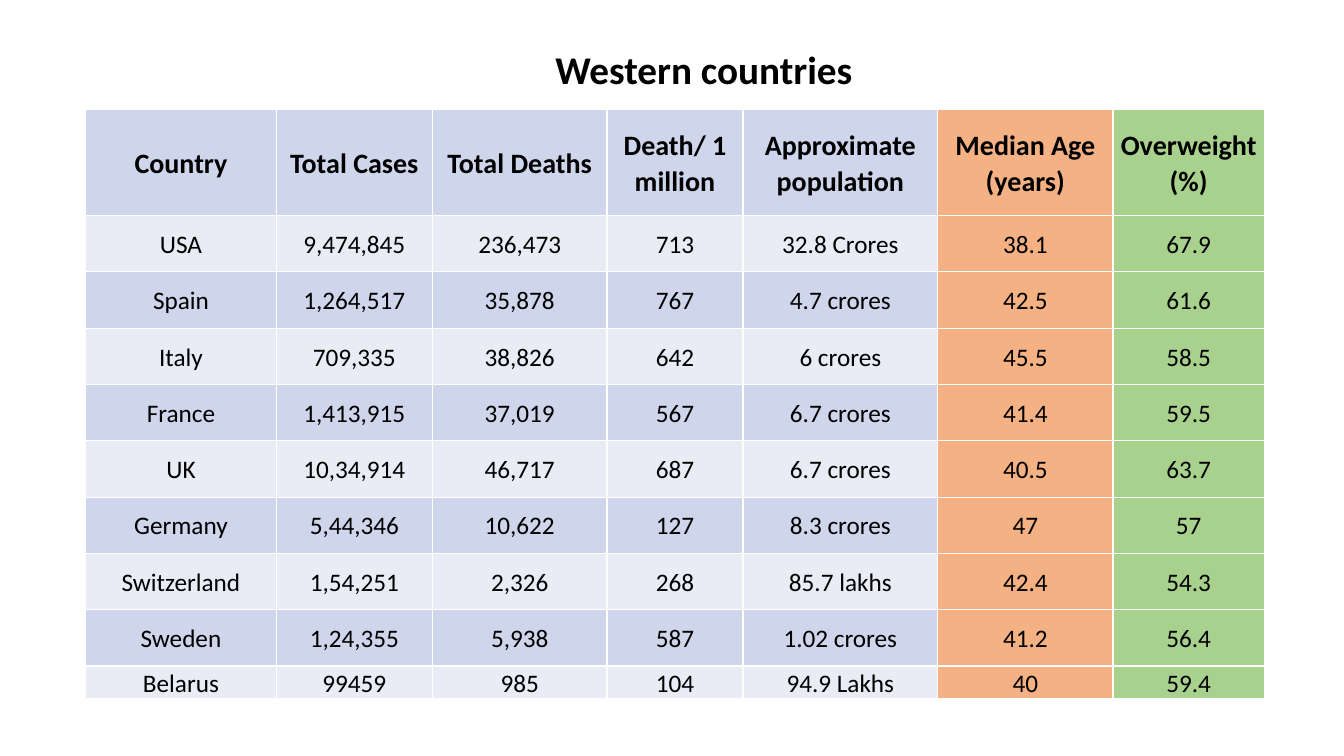
from dataclasses import dataclass

from lxml.etree import SubElement
from pptx import Presentation
from pptx.dml.color import RGBColor
from pptx.enum.text import MSO_ANCHOR, MSO_AUTO_SIZE, PP_ALIGN
from pptx.oxml.ns import qn
from pptx.util import Inches, Pt


@dataclass(frozen=True)
class Theme:
    font: str = "Calibri"
    text: str = "000000"
    border: str = "FFFFFF"
    bands: tuple = ("CFD5EA", "E9EBF5")
    median_age: str = "F4B183"
    overweight: str = "A9D18E"
    title_size: int = 28
    header_size: int = 20
    body_size: int = 18
    border_width: int = 1


THEME = Theme()
COLUMN_WIDTHS = [1.89, 1.55, 1.73, 1.35, 1.93, 1.74, 1.5]
ROW_HEIGHTS = [1.05] + [0.56] * 8 + [0.32]
COLUMN_FILLS = {5: THEME.median_age, 6: THEME.overweight}
COUNTRY_ROWS = [
    ["Country", "Total Cases", "Total Deaths", "Death/ 1 million",
     "Approximate population", "Median Age (years)", "Overweight (%)"],
    ["USA", "9,474,845", "236,473", "713", "32.8 Crores", "38.1", "67.9"],
    ["Spain", "1,264,517", "35,878", "767", "4.7 crores", "42.5", "61.6"],
    ["Italy", "709,335", "38,826", "642", "6 crores", "45.5", "58.5"],
    ["France", "1,413,915", "37,019", "567", "6.7 crores", "41.4", "59.5"],
    ["UK", "10,34,914", "46,717", "687", "6.7 crores", "40.5", "63.7"],
    ["Germany", "5,44,346", "10,622", "127", "8.3 crores", "47", "57"],
    ["Switzerland", "1,54,251", "2,326", "268", "85.7 lakhs", "42.4", "54.3"],
    ["Sweden", "1,24,355", "5,938", "587", "1.02 crores", "41.2", "56.4"],
    ["Belarus", "99459", "985", "104", "94.9 Lakhs", "40", "59.4"],
]
CELL_FORMAT = {
    "vertical_anchor": MSO_ANCHOR.MIDDLE,
    "margin_left": Inches(0.07),
    "margin_right": Inches(0.07),
    "margin_top": 0,
    "margin_bottom": 0,
}
PARAGRAPH_FORMAT = {
    "alignment": PP_ALIGN.CENTER,
    "line_spacing": 1.07,
    "space_after": Pt(8),
}


def apply_format(target, values):
    for name, value in values.items():
        setattr(target, name, value)


def add_run(p, text, size, bold):
    r = p.add_run()
    r.text = text
    apply_format(r.font, {"name": THEME.font, "size": Pt(size), "bold": bold})
    r.font.color.rgb = RGBColor.from_string(THEME.text)


def set_borders(cell):
    """Line all four edges; edges must come before the fill in the XML."""
    tc_pr = cell._tc.get_or_add_tcPr()
    for edge in ("a:lnL", "a:lnR", "a:lnT", "a:lnB"):
        ln = SubElement(tc_pr, qn(edge), w=str(Pt(THEME.border_width)))
        fill = SubElement(ln, qn("a:solidFill"))
        SubElement(fill, qn("a:srgbClr"), val=THEME.border)


def format_cell(cell, text, row, column):
    is_header = row == 0
    apply_format(cell, CELL_FORMAT)
    set_borders(cell)
    cell.fill.solid()
    color = COLUMN_FILLS.get(column, THEME.bands[row % 2])
    cell.fill.fore_color.rgb = RGBColor.from_string(color)
    p = cell.text_frame.paragraphs[0]
    apply_format(p, PARAGRAPH_FORMAT)
    add_run(p, text, THEME.header_size if is_header else THEME.body_size, is_header)


def add_title(s, left, top, width, height):
    box = s.shapes.add_textbox(*map(Inches, (left, top, width, height)))
    tf = box.text_frame
    apply_format(tf, {"word_wrap": True, "auto_size": MSO_AUTO_SIZE.SHAPE_TO_FIT_TEXT})
    add_run(tf.paragraphs[0], "Western countries", THEME.title_size, True)


def add_country_table(s, left, top, width, height):
    """Share the box among columns and rows in proportion to their sizes."""
    frame = s.shapes.add_table(len(ROW_HEIGHTS), len(COLUMN_WIDTHS),
                               *map(Inches, (left, top, width, height)))
    table = frame.table
    apply_format(table, {"first_row": False, "horz_banding": False})
    for column, size in zip(table.columns, COLUMN_WIDTHS):
        column.width = Inches(size * width / sum(COLUMN_WIDTHS))
    for row, size in zip(table.rows, ROW_HEIGHTS):
        row.height = Inches(size * height / sum(ROW_HEIGHTS))
    for i, values in enumerate(COUNTRY_ROWS):
        for j, text in enumerate(values):
            format_cell(table.cell(i, j), text, i, j)


def main():
    prs = Presentation()
    apply_format(prs, {"slide_width": Inches(13.33), "slide_height": Inches(7.5)})
    s = prs.slides.add_slide(prs.slide_layouts[6])
    add_country_table(s, 0.85, 1.09, 11.69, 5.84)
    add_title(s, 5.41, 0.4, 3.22, 0.57)
    prs.save("out.pptx")


if __name__ == "__main__":
    main()
